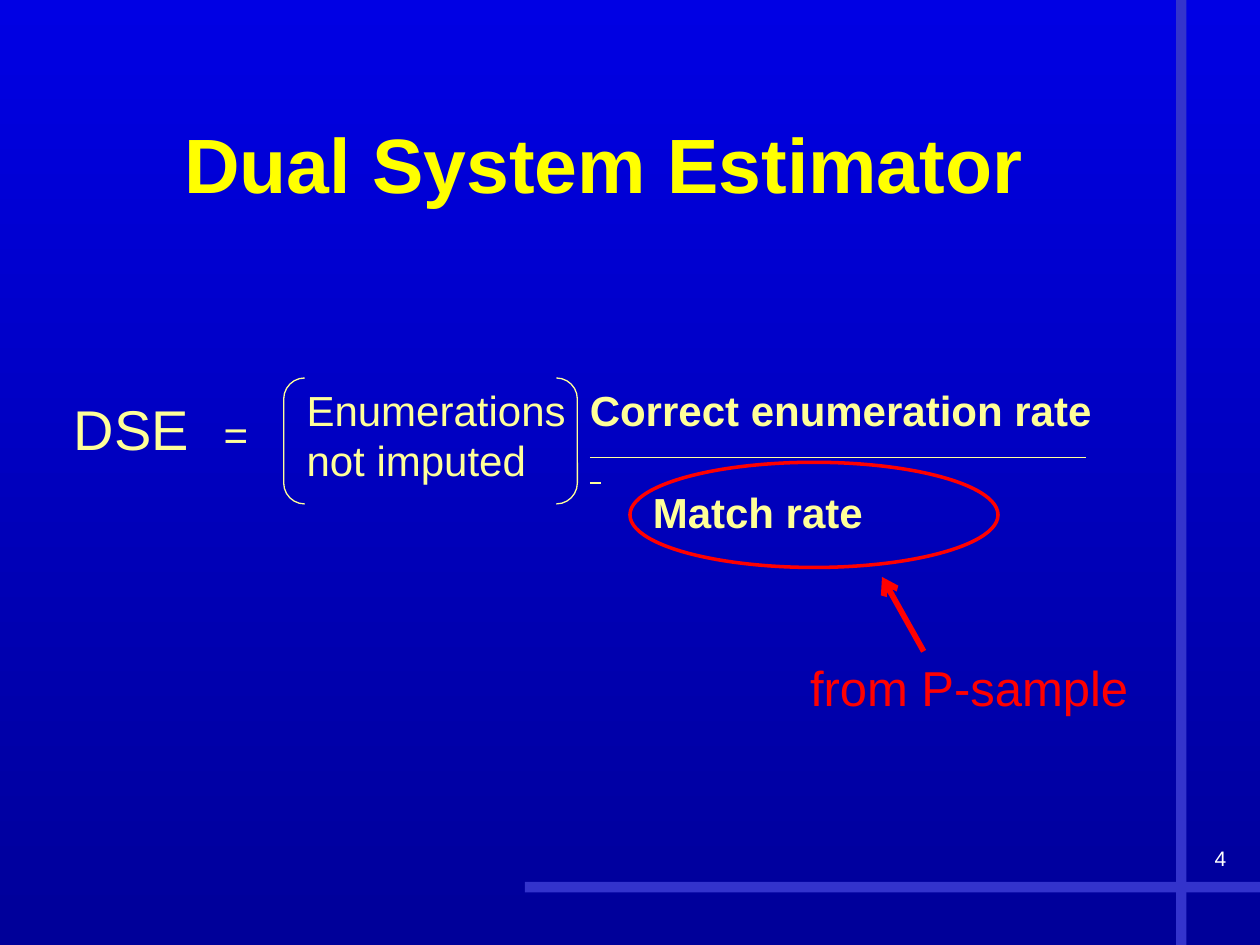
from lxml import etree
from pptx import Presentation
from pptx.dml.color import RGBColor
from pptx.enum.shapes import MSO_CONNECTOR, MSO_SHAPE
from pptx.enum.text import MSO_ANCHOR, PP_ALIGN
from pptx.oxml.ns import qn
from pptx.util import Cm, Pt

STRAIGHT = MSO_CONNECTOR.STRAIGHT
RECTANGLE, OVAL, BRACKETS = MSO_SHAPE.RECTANGLE, MSO_SHAPE.OVAL, MSO_SHAPE.DOUBLE_BRACKET
LEFT, CENTER, RIGHT = PP_ALIGN.LEFT, PP_ALIGN.CENTER, PP_ALIGN.RIGHT
TOP, MIDDLE = MSO_ANCHOR.TOP, MSO_ANCHOR.MIDDLE

CREAM, RED, YELLOW, WHITE, BAND = "FFFF99", "FF0000", "FFFF00", "FFFFFF", "3333CC"


def color(hex_string):
    return RGBColor.from_string(hex_string)


def add_text(box, lines, size, ink, bold=False, align=LEFT, anchor=TOP):
    """Add a text box at box (left, top, width, height in cm), one paragraph a line."""
    frame = slide.shapes.add_textbox(*map(Cm, box)).text_frame
    frame.word_wrap = True
    frame.vertical_anchor = anchor
    frame.text = "\n".join(lines)
    for paragraph in frame.paragraphs:
        paragraph.alignment = align
        paragraph.font.name = "Arial"
        paragraph.font.size = Pt(size)
        paragraph.font.bold = bold
        paragraph.font.color.rgb = color(ink)
    return frame


prs = Presentation()
prs.slide_width, prs.slide_height = Cm(25.4), Cm(19.05)
slide = prs.slides.add_slide(prs.slide_layouts[6])

background = slide.background.fill
background.gradient()
background.gradient_angle = 270
for stop, shade in zip(background.gradient_stops, ("0000E4", "000099")):
    stop.color.rgb = color(shade)

# Decorative bands
for band_box in ((10.58, 17.78, 14.82, 0.21), (23.71, 0, 0.21, 19.05)):
    band = slide.shapes.add_shape(RECTANGLE, *map(Cm, band_box))
    band.shadow.inherit = False
    band.fill.solid()
    band.fill.fore_color.rgb = color(BAND)
    band.line.fill.background()

add_text((1.48, 1.7, 21.39, 3.18), ["Dual System Estimator"], 44, YELLOW,
         bold=True, align=CENTER, anchor=MIDDLE)
add_text((19.69, 16.93, 5.28, 1.27), ["4"], 12, WHITE, align=RIGHT)

# Left side of the equation: the tab stop places the equals sign
left_side = add_text((1.24, 7.83, 4.27, 1.62), ["DSE\t="], 32, CREAM).paragraphs[0]
tabs = etree.Element(qn("a:tabLst"))
etree.SubElement(tabs, qn("a:tab"), pos=str(Cm(3.02)), algn="l")
left_side._p.get_or_add_pPr().insert(0, tabs)
dse, equals = left_side.runs[0], left_side.add_run()
dse.text, equals.text = "DSE\t", "="
equals.font.size = Pt(24)

# Right side of the equation: bracketed count times a fraction
add_text((5.93, 7.62, 6.15, 2.31), ["Enumerations", "not imputed"], 24, CREAM)
fraction = add_text((11.64, 7.62, 11.63, 3.33),
                    ["Correct enumeration rate", "\tMatch rate"], 24, CREAM, bold=True)
fraction.paragraphs[1].space_before = Pt(29.5)

for outline, outline_box, ink, weight in (
    (BRACKETS, (5.72, 7.62, 5.92, 2.54), CREAM, 0.75),
    (OVAL, (12.7, 9.32, 7.42, 2.12), RED, 2),
):
    mark = slide.shapes.add_shape(outline, *map(Cm, outline_box))
    mark.shadow.inherit = False
    mark.fill.background()
    mark.line.color.rgb = color(ink)
    mark.line.width = Pt(weight)

add_text((16.08, 13.13, 7.42, 1.45), ["from P-sample"], 28, RED)

# Fraction bar, short dash under it, and the arrow to the match rate
for ends, ink, weight in (
    ((11.89, 9.22, 21.89, 9.22), CREAM, 0.75),
    ((11.89, 9.74, 12.12, 9.74), CREAM, 1),
    ((18.62, 13.13, 17.78, 11.63), RED, 3.25),
):
    stroke = slide.shapes.add_connector(STRAIGHT, *map(Cm, ends))
    stroke.line.color.rgb = color(ink)
    stroke.line.width = Pt(weight)
    etree.SubElement(stroke._element.spPr, qn("a:effectLst"))
arrow_line = stroke.line._get_or_add_ln()
etree.SubElement(arrow_line, qn("a:tailEnd"), type="arrow")

prs.save("out.pptx")
